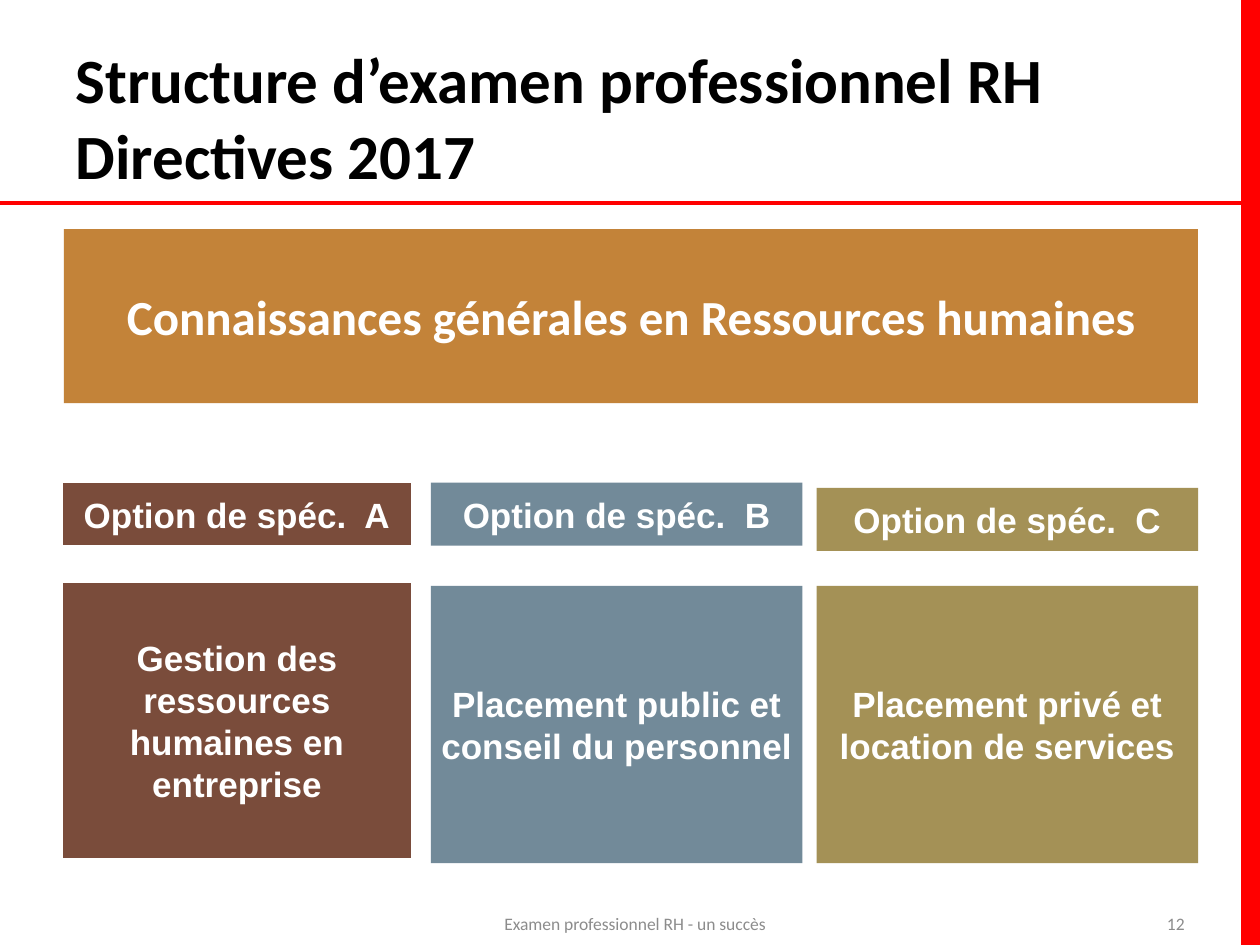
from lxml import etree
from pptx import Presentation
from pptx.dml.color import RGBColor
from pptx.enum import shapes, text
from pptx.oxml import ns
from pptx.util import Pt

OPTIONS = [
    # letter, subject, colour, left, label top, subject top, width, outline
    ("A", "Gestion des ressources humaines en entreprise",
     "59200A", 35.3, 275.8, 332.6, 200.2, "FFFFFF"),
    ("B", "Placement public et conseil du personnel",
     "4F6D80", 246.2, 275.8, 334.8, 212.4, None),
    ("C", "Placement privé et location de services",
     "8E762C", 466.6, 278.8, 334.8, 218, None),
]


def colour(value):
    return RGBColor.from_string(value)


def style(para, size, font, shade, bold=False, align=text.PP_ALIGN.LEFT):
    para.alignment = align
    para.font.size = Pt(size)
    para.font.name = font
    para.font.bold = bold
    para.font.color.rgb = colour(shade)


def add_block(page, left, top, width, height, words, fill,
              font="Arial", size=20, outline=None):
    box = page.shapes.add_shape(shapes.MSO_SHAPE.RECTANGLE,
                                Pt(left), Pt(top), Pt(width), Pt(height))
    box.shadow.inherit = False
    box.fill.solid()
    box.fill.fore_color.rgb = colour(fill)
    # 80 % opacity
    shade = box.fill._xPr.find(".//" + ns.qn("a:srgbClr"))
    etree.SubElement(shade, ns.qn("a:alpha"), val="80000")
    if outline:
        box.line.color.rgb = colour(outline)
        box.line.width = Pt(1)
    else:
        box.line.fill.background()
    frame = box.text_frame
    frame.word_wrap = True
    frame.vertical_anchor = text.MSO_ANCHOR.MIDDLE
    frame.margin_left = frame.margin_right = Pt(5)
    frame.margin_top = frame.margin_bottom = Pt(3)
    para = frame.paragraphs[0]
    para.text = words
    para.space_before = Pt(4.4)
    style(para, size, font, "FFFFFF", True, text.PP_ALIGN.CENTER)


def add_frame(page, width, height):
    # Red band on the right and rule below the title
    edge = width - 10
    band = page.shapes.add_shape(shapes.MSO_SHAPE.RECTANGLE,
                                 Pt(edge), 0, Pt(10), Pt(height))
    band.shadow.inherit = False
    band.fill.solid()
    band.fill.fore_color.rgb = colour("FF0000")
    band.line.color.rgb = colour("FF0000")
    band.line.width = Pt(2)
    rule = page.shapes.add_connector(shapes.MSO_CONNECTOR.STRAIGHT,
                                     0, Pt(116), Pt(edge), Pt(116))
    rule.line.color.rgb = colour("FF0000")
    rule.line.width = Pt(2.25)
    etree.SubElement(rule._element.spPr, ns.qn("a:effectLst"))


def add_title(page, left, top, width, height):
    title = page.shapes.title
    title.left, title.top = Pt(left), Pt(top)
    title.width, title.height = Pt(width), Pt(height)
    frame = title.text_frame
    frame.vertical_anchor = text.MSO_ANCHOR.MIDDLE
    frame.auto_size = text.MSO_AUTO_SIZE.NONE
    para = frame.paragraphs[0]
    para.text = "Structure d’examen professionnel RH\vDirectives 2017"
    style(para, 36, "Calibri", "000000", True)


def add_option(page, letter, subject, fill, left, label_top, subject_top,
               width, outline):
    add_block(page, left, subject_top, width, 158.4, subject, fill,
              outline=outline)
    add_block(page, left, label_top, width, 36, f"Option de spéc.  {letter}",
              fill, outline=outline)


def add_footer(page, left, width, words, align):
    box = page.shapes.add_textbox(Pt(left), Pt(513.4), Pt(width), Pt(28.8))
    frame = box.text_frame
    frame.word_wrap = True
    frame.vertical_anchor = text.MSO_ANCHOR.MIDDLE
    para = frame.paragraphs[0]
    para.text = words
    style(para, 10, "Calibri", "8C8C8C", align=align)


def main():
    deck = Presentation()
    deck.slide_width, deck.slide_height = Pt(720), Pt(540)
    page = deck.slides.add_slide(deck.slide_layouts[5])

    add_frame(page, 720, 540)
    add_title(page, 36, 21.6, 648, 90)

    # Common subject, then the three options
    add_block(page, 36.6, 131, 648, 99.4,
              "Connaissances générales en Ressources humaines", "B46408",
              font="Calibri", size=28)
    for option in OPTIONS:
        add_option(page, *option)

    # Footer and page number
    add_footer(page, 235.4, 254.9, "Examen professionnel RH - un succès",
               text.PP_ALIGN.CENTER)
    add_footer(page, 516.2, 167.8, "12", text.PP_ALIGN.RIGHT)
    deck.save("out.pptx")


if __name__ == "__main__":
    main()
